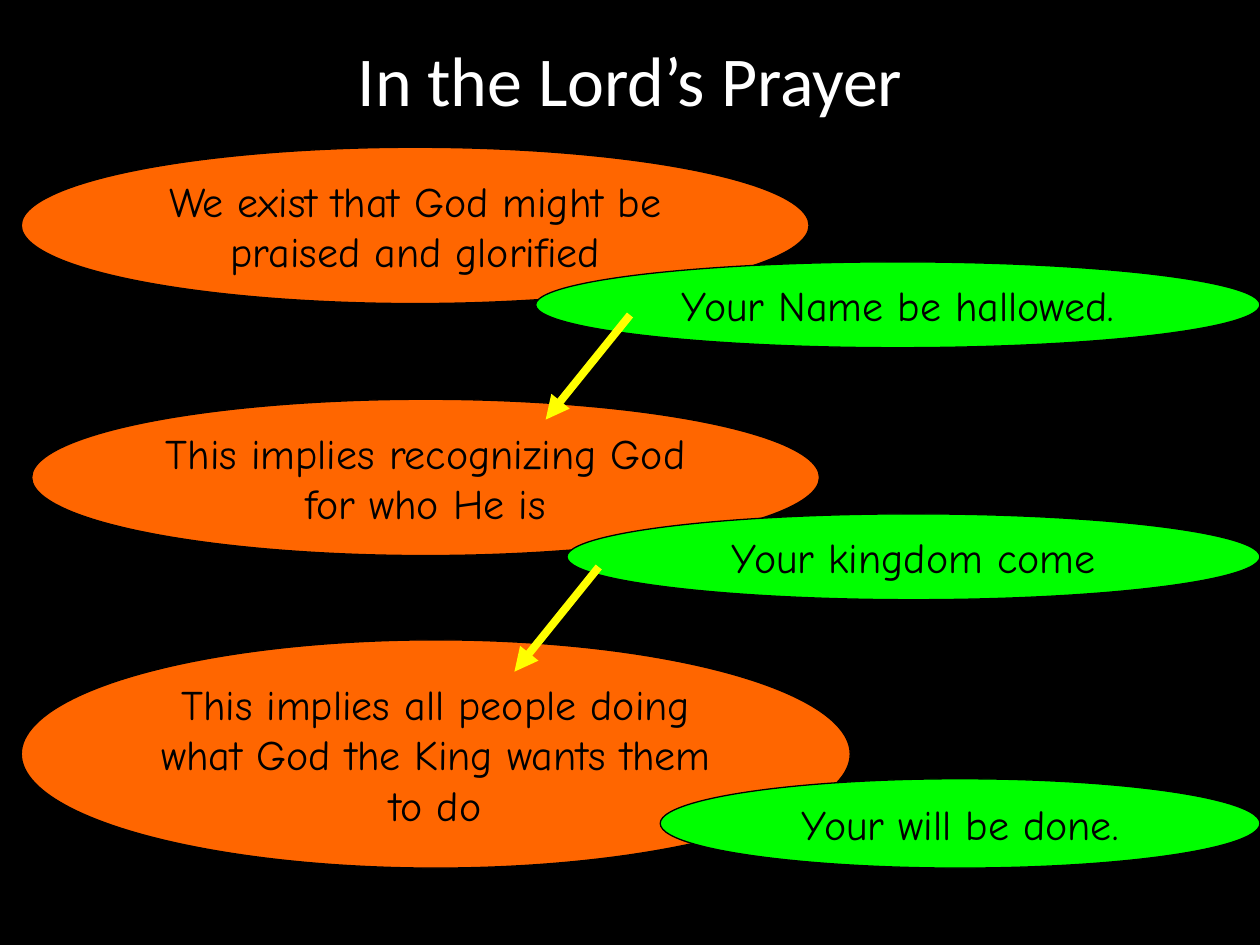
from pptx import Presentation
from pptx.dml.color import RGBColor
from pptx.enum.shapes import MSO_CONNECTOR as Conn, MSO_SHAPE as Shape
from pptx.enum.text import MSO_ANCHOR as Anchor, PP_ALIGN as Align
from pptx.oxml.ns import qn
from pptx.util import Cm, Pt
from lxml.etree import SubElement

BLACK = RGBColor(0x00, 0x00, 0x00)
WHITE = RGBColor(0xFF, 0xFF, 0xFF)
ORANGE = RGBColor(0xFF, 0x66, 0x00)
GREEN = RGBColor(0x00, 0xFF, 0x00)
YELLOW = RGBColor(0xFF, 0xFF, 0x00)

WIDTH, HEIGHT = 25.4, 19.05


class Board:
    """Holds the style and the current slide; lengths are in centimetres."""
    head, body = "Calibri", "Comic Neue"

    def __init__(self, deck):
        self.slide = deck.slides.add_slide(deck.slide_layouts[5])
        fill = self.slide.background.fill
        fill.solid()
        fill.fore_color.rgb = BLACK

    def label(self, shape, text, font, size, color):
        frame = shape.text_frame
        frame.text = text
        frame.word_wrap = True
        frame.vertical_anchor = Anchor.MIDDLE
        para = frame.paragraphs[0]
        para.alignment = Align.CENTER
        style = para.runs[0].font
        style.name, style.size = font, Pt(size)
        style.color.rgb = color

    def title(self, text, height):
        shape = self.slide.shapes.title
        shape.left, shape.top = Cm(0), Cm(0)
        shape.width, shape.height = Cm(WIDTH), Cm(height)
        self.label(shape, text, self.head, 40, WHITE)

    def oval(self, text, left, top, width, height, color):
        shape = self.slide.shapes.add_shape(
            Shape.OVAL, Cm(left), Cm(top), Cm(width), Cm(height))
        shape.shadow.inherit = False
        shape.fill.solid()
        shape.fill.fore_color.rgb = color
        shape.line.color.rgb = BLACK
        shape.line.width = Pt(0.75)
        self.label(shape, text, self.body, 24, BLACK)

    def arrow(self, x, y, dx, dy):
        link = self.slide.shapes.add_connector(
            Conn.STRAIGHT, Cm(x), Cm(y), Cm(x + dx), Cm(y + dy))
        link.line.color.rgb = YELLOW
        link.line.width = Pt(4.5)
        props = link._element.spPr
        SubElement(props.find(qn("a:ln")), qn("a:tailEnd"), type="triangle")
        SubElement(props, qn("a:effectLst"))


# Each step: purpose (left, top, width, height), arrow start, petition (left, top, height)
STEPS = [
    ("We exist that God might be praised and glorified",
     (0.43, 2.97, 15.88, 3.15), None,
     "Your Name be hallowed.", (10.8, 5.28, 1.73)),
    ("This implies recognizing God for who He is",
     (0.64, 8.05, 15.88, 3.15), (12.7, 6.35),
     "Your kingdom come", (11.43, 10.36, 1.73)),
    ("This implies all people doing what God the King wants them to do",
     (0.43, 12.9, 16.71, 4.6), (12.07, 11.43),
     "Your will be done.", (13.31, 15.7, 1.8)),
]


def main():
    deck = Presentation()
    deck.slide_width, deck.slide_height = Cm(WIDTH), Cm(HEIGHT)
    board = Board(deck)
    board.title("In the Lord’s Prayer", 3.18)

    for aim, box, start, plea, (left, top, height) in STEPS:
        board.oval(aim, *box, ORANGE)
        # Arrow down from the petition before
        if start:
            board.arrow(*start, -1.7, 2.11)
        # Petitions reach the right edge of the slide
        board.oval(plea, left, top, WIDTH - left, height, GREEN)

    deck.save("out.pptx")


if __name__ == "__main__":
    main()
